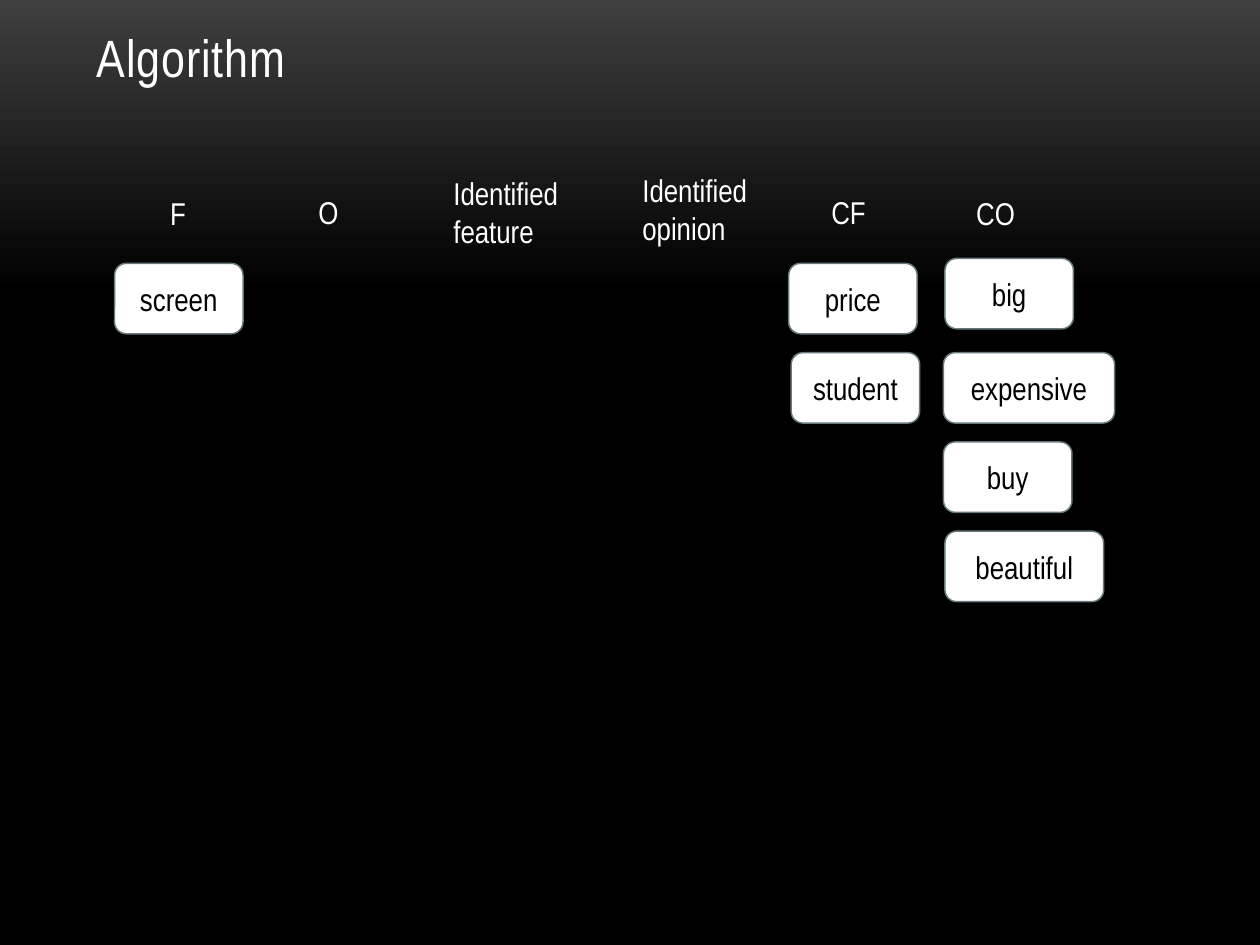
from pptx import Presentation
from pptx.dml.color import RGBColor
from pptx.enum.shapes import MSO_SHAPE as Preset
from pptx.enum.text import MSO_ANCHOR as Anchor, MSO_AUTO_SIZE as AutoSize, PP_ALIGN as Align
from pptx.util import Cm, Pt

TITLE = "Algorithm"
FONT = "Arial Narrow"
COLORS = {"glow": "3F3F3F", "black": "000000", "white": "FFFFFF", "outline": "67787B"}

# text, left, top, width, height
HEADINGS = [
    ("F", 3.18, 3.78, 0.84, 1.02),
    ("O", 6.17, 3.76, 0.84, 1.02),
    ("Identified feature", 8.89, 3.38, 2.77, 1.8),
    ("Identified opinion", 12.7, 3.33, 2.79, 1.8),
    ("CF", 16.51, 3.76, 1.42, 1.02),
    ("CO", 19.43, 3.78, 1.55, 1.02),
]
# text, left, row, width, vertical shift
WORDS = [
    ("screen", 2.31, 0, 2.59, 0),
    ("price", 15.9, 0, 2.59, 0),
    ("student", 15.95, 1, 2.59, 0),
    ("big", 19.05, 0, 2.59, -0.1),
    ("expensive", 19.02, 1, 3.45, 0),
    ("buy", 19.02, 2, 2.59, 0),
    ("beautiful", 19.05, 3, 3.2, 0),
]
ROW_TOP, ROW_STEP, WORD_HEIGHT = 5.31, 1.8, 1.42


def color(name):
    """Return the named colour."""
    return RGBColor.from_string(COLORS[name])


def write(shape, text, size, color_name, align, anchor):
    """Put one formatted paragraph in a shape and return its run."""
    frame = shape.text_frame
    frame.text = text
    frame.word_wrap = True
    frame.auto_size = AutoSize.NONE
    frame.vertical_anchor = anchor
    paragraph = frame.paragraphs[0]
    paragraph.alignment = align
    run = paragraph.runs[0]
    run.font.name = FONT
    run.font.size = Pt(size)
    run.font.color.rgb = color(color_name)
    return run


def paint_background(slide):
    """Fade the slide from grey at the top to black."""
    fill = slide.background.fill
    fill.gradient()
    fill.gradient_angle = 270
    for stop, name, position in zip(fill.gradient_stops, ("glow", "black"), (0, 0.31)):
        stop.color.rgb = color(name)
        stop.position = position


def add_title(slide):
    """Place and format the title placeholder."""
    title = slide.shapes.title
    title.left, title.top, title.width, title.height = map(Cm, (1.7, 0.53, 22.02, 1.37))
    run = write(title, TITLE, 30, "white", Align.LEFT, Anchor.BOTTOM)
    run._r.get_or_add_rPr().set("spc", "50")


def add_heading(slide, text, *place):
    """Add a column heading."""
    box = slide.shapes.add_textbox(*map(Cm, place))
    write(box, text, 18, "white", Align.LEFT, Anchor.TOP)


def add_word(slide, text, left, row, width, shift):
    """Add a rounded word card in its row."""
    top = ROW_TOP + row * ROW_STEP + shift
    card = slide.shapes.add_shape(
        Preset.ROUNDED_RECTANGLE, Cm(left), Cm(top), Cm(width), Cm(WORD_HEIGHT))
    card.shadow.inherit = False
    card.fill.solid()
    card.fill.fore_color.rgb = color("white")
    card.line.color.rgb = color("outline")
    card.line.width = Pt(0.85)
    write(card, text, 18, "black", Align.CENTER, Anchor.MIDDLE)


def main():
    """Build the slide."""
    presentation = Presentation()
    presentation.slide_width, presentation.slide_height = Cm(25.4), Cm(19.05)
    slide = presentation.slides.add_slide(presentation.slide_layouts[5])
    paint_background(slide)
    add_title(slide)
    for heading in HEADINGS:
        add_heading(slide, *heading)
    for word in WORDS:
        add_word(slide, *word)
    presentation.save("out.pptx")


if __name__ == "__main__":
    main()
